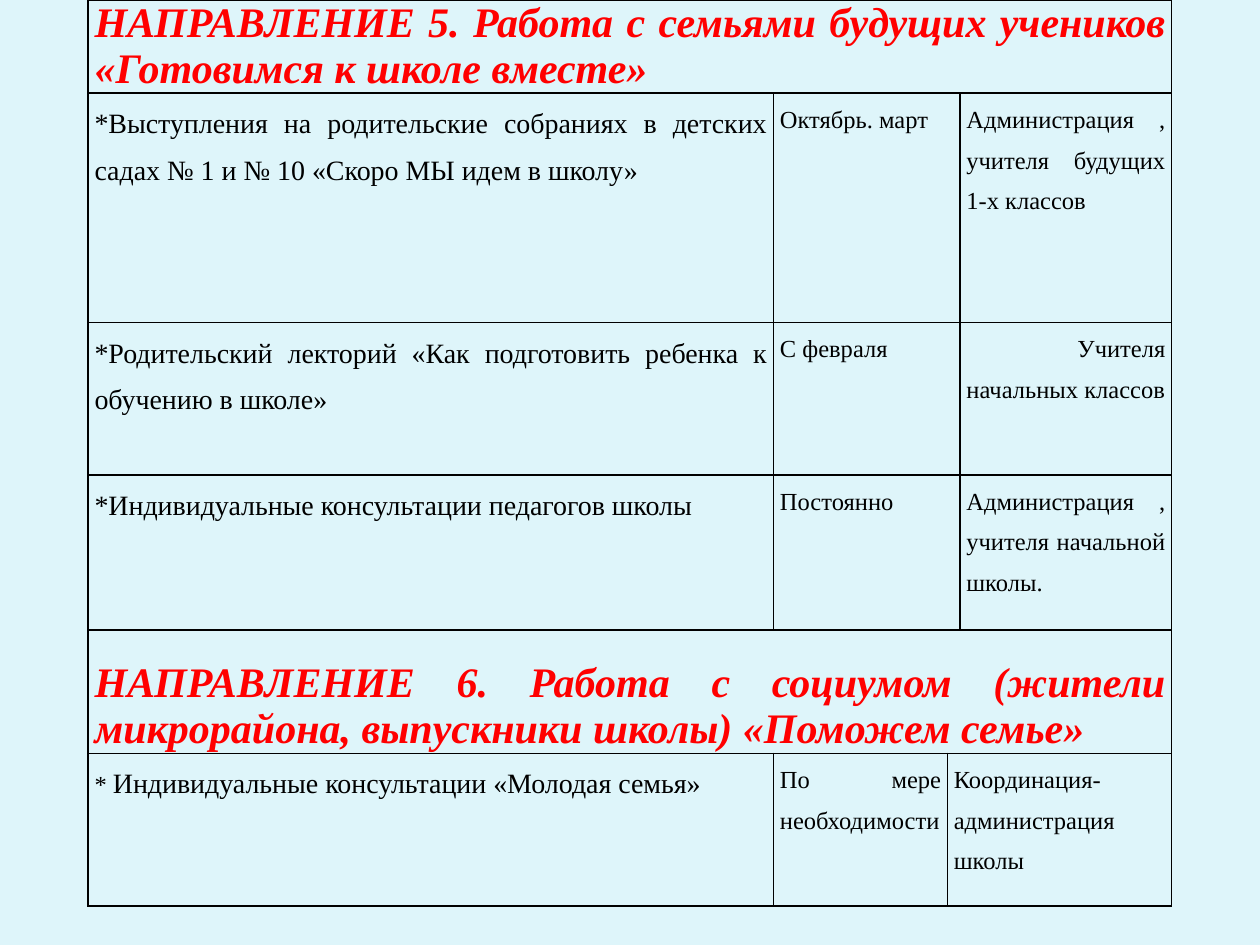
from lxml.etree import SubElement
from pptx import Presentation
from pptx.dml.color import RGBColor
from pptx.enum.text import PP_ALIGN
from pptx.oxml.ns import qn
from pptx.util import Inches, Pt

COLORS = {"page": "DEF5FA", "head": "FF0000", "text": "000000", "line": "000000"}
FONT = "Times New Roman"
COLS = [5.44, 1.38, 0.1, 1.68]
ROWS = [0.74, 1.82, 1.21, 1.23, 0.24, 0.74, 1.21]
GAP = 4  # the empty row above the second heading

HEADS = {
    0: "НАПРАВЛЕНИЕ 5. Работа с семьями будущих учеников «Готовимся к школе вместе»",
    5: "НАПРАВЛЕНИЕ 6. Работа с социумом (жители микрорайона, выпускники школы) "
       "«Поможем семье»",
}
# row: (runs of the task, date, who, column where "who" starts)
TASKS = {
    1: ([("*Выступления на родительские собраниях в детских садах № 1 и № 10 "
          "«Скоро МЫ идем в школу»", 16)],
        "Октябрь. март", "Администрация , учителя будущих 1-х классов", 3),
    2: ([("*Родительский лекторий «Как подготовить ребенка к обучению в школе»", 16)],
        "С февраля", " Учителя начальных классов", 3),
    3: ([("*Индивидуальные консультации педагогов школы", 16)],
        "Постоянно ", "Администрация , учителя начальной школы.", 3),
    6: ([("* ", 14), ("Индивидуальные консультации «Молодая семья»", 16)],
        "По мере необходимости", "Координация-администрация школы ", 2),
}


def color(name):
    return RGBColor.from_string(COLORS[name])


def add_border(cell, side, shown):
    line = SubElement(cell._tc.get_or_add_tcPr(), qn(f"a:ln{side}"), w=str(Pt(1)))
    if shown:
        fill = SubElement(line, qn("a:solidFill"))
        SubElement(fill, qn("a:srgbClr"), val=COLORS["line"])
    else:
        SubElement(line, qn("a:noFill"))


def style_cell(cell, row):
    """Set margins and borders; no line parts the gap row from its heading."""
    cell.margin_left = cell.margin_right = Inches(0.05)
    cell.margin_top = cell.margin_bottom = 0
    hidden = {GAP: "B", GAP + 1: "T"}.get(row)
    for side in "LRTB":
        add_border(cell, side, side != hidden)
    cell.fill.background()


def write(cell, runs, tone="text", strong=False, space=1.5):
    para = cell.text_frame.paragraphs[0]
    para.alignment = PP_ALIGN.JUSTIFY
    if space:
        para.line_spacing = space
    for text, size in runs:
        run = para.add_run()
        run.text = text
        font = run.font
        font.name, font.size = FONT, Pt(size)
        font.bold = font.italic = strong
        font.color.rgb = color(tone)


def merge(table, row, first, last):
    table.cell(row, first).merge(table.cell(row, last))


def add_grid(slide):
    frame = slide.shapes.add_table(len(ROWS), len(COLS), Inches(0.7), 0,
                                   Inches(sum(COLS)), Inches(sum(ROWS)))
    table = frame.table
    table.first_row = table.horz_banding = False
    for col, width in zip(table.columns, COLS):
        col.width = Inches(width)
    for index, (row, height) in enumerate(zip(table.rows, ROWS)):
        row.height = Inches(height)
        for cell in row.cells:
            style_cell(cell, index)
    return table


def fill_grid(table):
    for row, text in HEADS.items():
        merge(table, row, 0, 3)
        write(table.cell(row, 0), [(text, 24)], "head", True, None)
    for row, (task, date, who, start) in TASKS.items():
        if start == 3:
            merge(table, row, 1, 2)
        else:
            merge(table, row, 2, 3)
        write(table.cell(row, 0), task)
        write(table.cell(row, 1), [(date, 14)])
        write(table.cell(row, start), [(who, 14)])
    merge(table, GAP, 0, 3)
    for cell in table.rows[GAP].cells:
        para = cell.text_frame.paragraphs[0]
        SubElement(para._p, qn("a:endParaRPr"), sz="1000")


def main():
    deck = Presentation()
    deck.slide_width, deck.slide_height = Inches(10), Inches(7.5)
    slide = deck.slides.add_slide(deck.slide_layouts[6])
    back = slide.background.fill
    back.solid()
    back.fore_color.rgb = color("page")
    fill_grid(add_grid(slide))
    deck.save("out.pptx")


if __name__ == "__main__":
    main()
